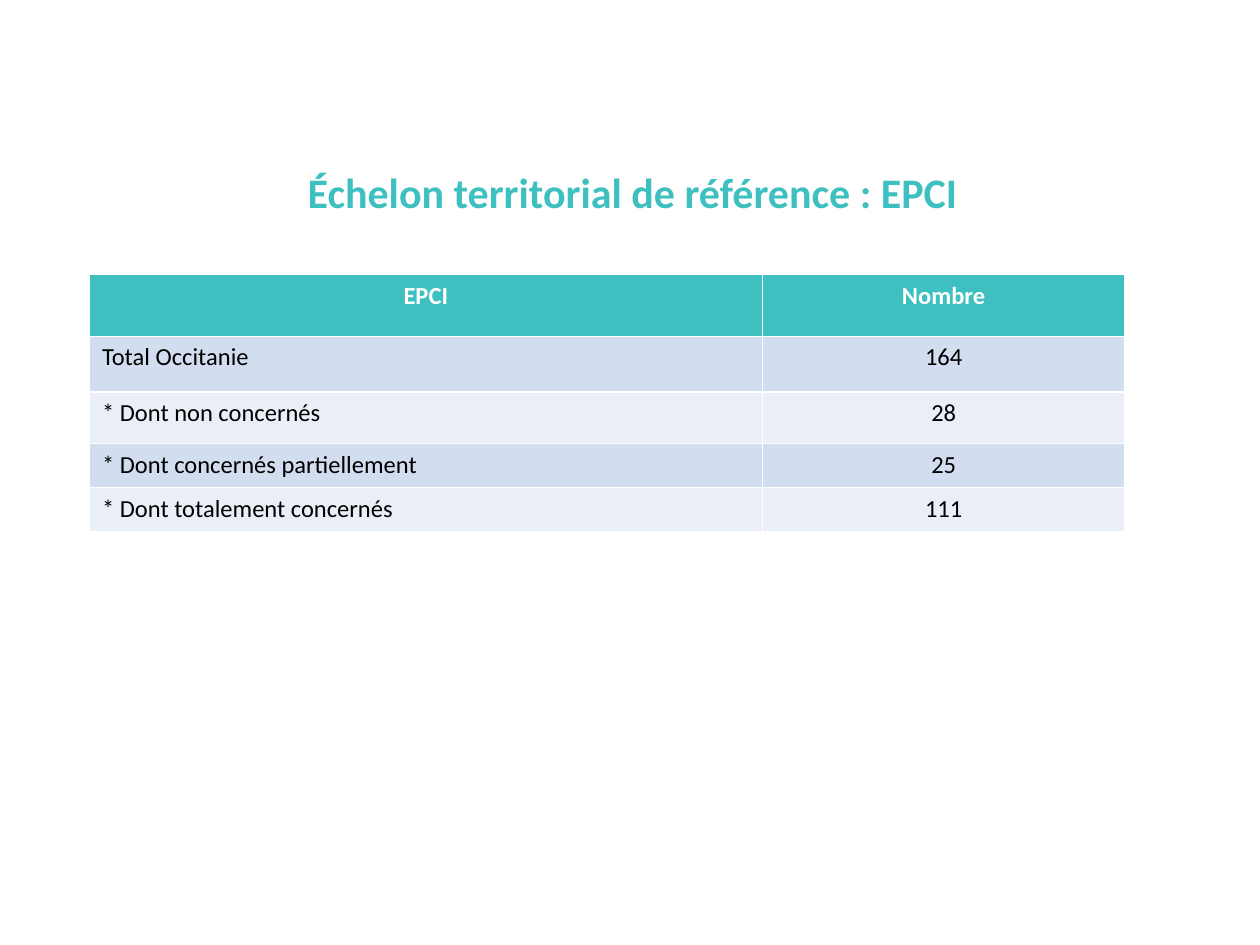
from dataclasses import dataclass
from pptx import Presentation
from pptx.dml.color import RGBColor as RGB
from pptx.enum.text import MSO_ANCHOR as Anchor, PP_ALIGN as Align
from pptx.util import Inches, Pt


@dataclass
class Theme:
    font: str = "Calibri"
    teal: str = "3EC0C0"
    white: str = "FFFFFF"
    black: str = "000000"
    bands: tuple = ("D2DEEF", "EAEFF7")
    title: int = 24
    body: int = 14


theme = Theme()


def write(frame, text, size=theme.body, color=theme.black, bold=False,
          align=Align.LEFT, spacing=1.0):
    frame.word_wrap = True
    para = frame.paragraphs[0]
    para.alignment = align
    para.line_spacing = spacing
    run = para.add_run()
    run.text = text
    font = run.font
    font.name, font.size, font.bold = theme.font, Pt(size), bold
    font.color.rgb = RGB.from_string(color)


deck = Presentation()
deck.slide_width, deck.slide_height = Inches(10), Inches(7.5)
slide = deck.slides.add_slide(deck.slide_layouts[5])

title = slide.shapes.title
title.left, title.top = Inches(0.71), Inches(1.09)
title.width, title.height = Inches(8.62), Inches(0.91)
title.text_frame.vertical_anchor = Anchor.MIDDLE
write(title.text_frame, "Échelon territorial de référence : EPCI", size=theme.title,
      color=theme.teal, bold=True, align=Align.CENTER, spacing=0.9)

rows = [
    ("EPCI", "Nombre"),
    ("Total Occitanie", "164"),
    ("* Dont non concernés", "28"),
    ("* Dont concernés partiellement", "25"),
    ("* Dont totalement concernés", "111"),
]
widths = [5.34, 2.88]
heights = [0.49, 0.44, 0.41, 0.35, 0.35]

# The default table style supplies the white rules, thicker under the header.
table = slide.shapes.add_table(
    len(rows), len(widths), Inches(0.71), Inches(2.18),
    Inches(sum(widths)), Inches(sum(heights))).table
for col, width in zip(table.columns, widths):
    col.width = Inches(width)

for r, (row, height) in enumerate(zip(rows, heights)):
    table.rows[r].height = Inches(height)
    head = r == 0
    fill = theme.teal if head else theme.bands[(r - 1) % 2]
    for c, text in enumerate(row):
        cell = table.cell(r, c)
        cell.fill.solid()
        cell.fill.fore_color.rgb = RGB.from_string(fill)
        write(cell.text_frame, text, bold=head,
              color=theme.white if head else theme.black,
              align=Align.CENTER if head or c else Align.LEFT)

deck.save("out.pptx")
